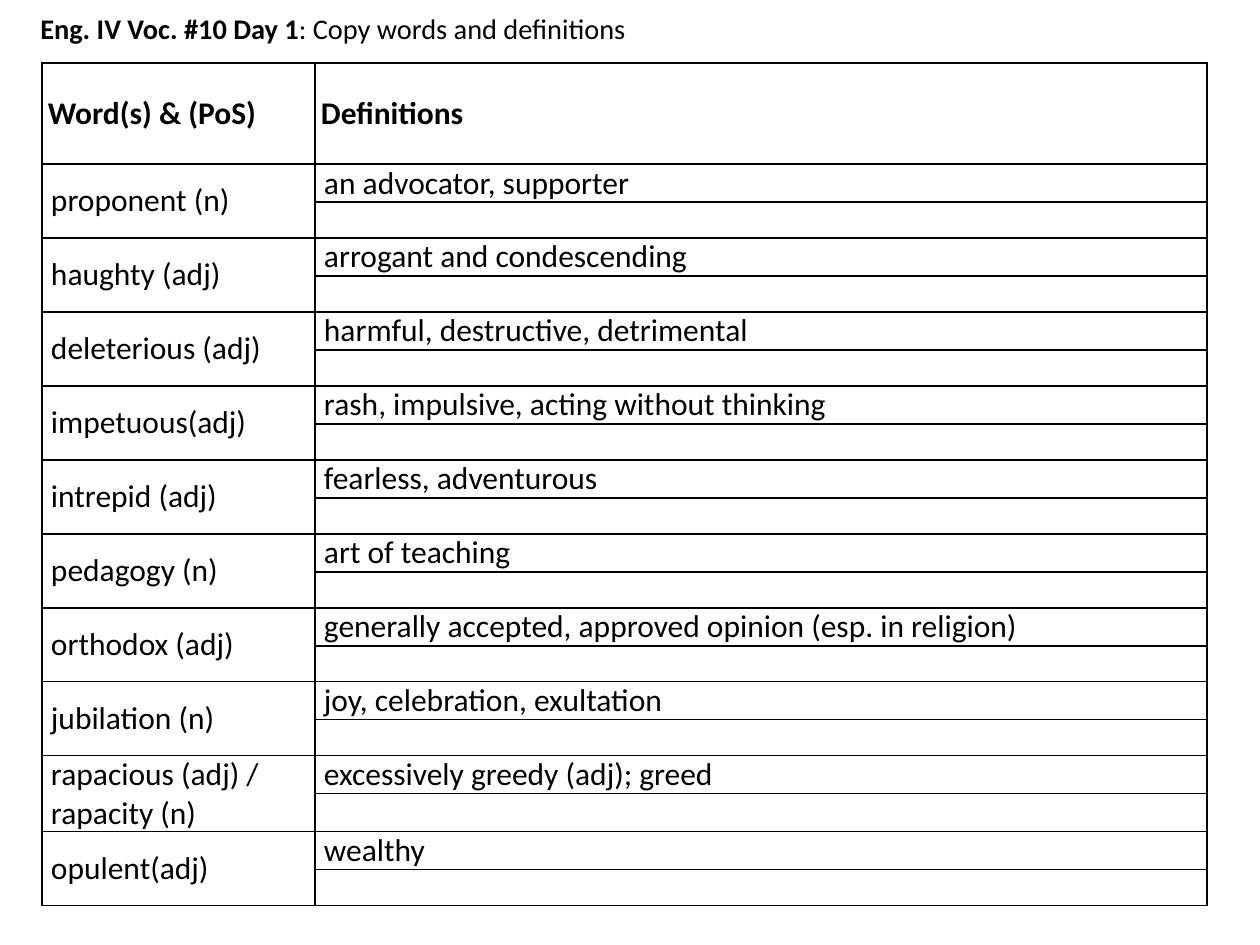
from dataclasses import dataclass

from lxml import etree
from pptx import Presentation, util as u
from pptx.dml.color import RGBColor
from pptx.enum import text
from pptx.oxml import ns

PX_PER_INCH = 126
VOCABULARY = [
    ("proponent (n)", "an advocator, supporter"),
    ("haughty (adj)", "arrogant and condescending"),
    ("deleterious (adj)", "harmful, destructive, detrimental"),
    ("impetuous(adj)", "rash, impulsive, acting without thinking"),
    ("intrepid (adj)", "fearless, adventurous"),
    ("pedagogy (n)", "art of teaching"),
    ("orthodox (adj)", "generally accepted, approved opinion (esp. in religion)"),
    ("jubilation (n)", "joy, celebration, exultation"),
    ("rapacious (adj) /\nrapacity (n)", "excessively greedy (adj); greed"),
    ("opulent(adj)", "wealthy"),
]


@dataclass(frozen=True)
class Theme:
    font: str = "Calibri"
    ink: str = "000000"
    title_size: float = 16.2
    table_size: float = 18
    blank_size: float = 12
    border_width: float = 1


def px(length):
    return u.Emu(round(length * 914400 / PX_PER_INCH))


def write(paragraph, content, *, theme, size, bold=False):
    run = paragraph.add_run()
    run.text = content
    run.font.name = theme.font
    run.font.size = u.Pt(size)
    run.font.bold = bold
    run.font.color.rgb = RGBColor.from_string(theme.ink)


class SlideBuilder:
    """Draws styled elements on one slide, measured in px."""

    def __init__(self, slide, theme):
        self.slide = slide
        self.theme = theme

    def heading(self, box, parts):
        frame = self.slide.shapes.add_textbox(*map(px, box)).text_frame
        frame.word_wrap = True
        frame.vertical_anchor = text.MSO_ANCHOR.MIDDLE
        line = frame.paragraphs[0]
        line.alignment = text.PP_ALIGN.CENTER
        for content, bold in parts:
            write(line, content, theme=self.theme,
                  size=self.theme.title_size, bold=bold)

    def table(self, left, top, columns, rows):
        frame = self.slide.shapes.add_table(
            len(rows), len(columns), px(left), px(top),
            px(sum(columns)), px(sum(rows)))
        grid = frame.table
        grid.first_row = grid.horz_banding = False
        for column, width in zip(grid.columns, columns):
            column.width = px(width)
        for row, height in zip(grid.rows, rows):
            row.height = px(height)
        for cell in grid.iter_cells():
            self.blank_cell(cell)
        return grid

    def blank_cell(self, cell):
        cell.margin_left = cell.margin_right = px(9)
        cell.margin_top = cell.margin_bottom = 0
        cell.vertical_anchor = text.MSO_ANCHOR.MIDDLE
        cell.fill.background()
        properties = cell._tc.get_or_add_tcPr()
        for place, side in enumerate("LRTB"):
            edge = etree.Element(ns.qn(f"a:ln{side}"),
                                 w=str(u.Pt(self.theme.border_width)))
            fill = etree.SubElement(edge, ns.qn("a:solidFill"))
            etree.SubElement(fill, ns.qn("a:srgbClr"), val=self.theme.ink)
            properties.insert(place, edge)
        etree.SubElement(cell.text_frame.paragraphs[0]._p,
                         ns.qn("a:endParaRPr"),
                         sz=str(round(self.theme.blank_size * 100)))

    def fill_cell(self, cell, content, bold=False, margin=9):
        cell.margin_left = cell.margin_right = px(margin)
        frame = cell.text_frame
        for index, line in enumerate(content.split("\n")):
            paragraph = frame.add_paragraph() if index else frame.paragraphs[0]
            write(paragraph, line, theme=self.theme,
                  size=self.theme.table_size, bold=bold)


def main():
    deck = Presentation()
    deck.slide_width, deck.slide_height = px(1260), px(945)
    builder = SlideBuilder(deck.slides.add_slide(deck.slide_layouts[6]), Theme())
    builder.heading((0, 0, 672, 57), [
        ("Eng. IV Voc. #10 Day 1", True),
        (": Copy words and definitions ", False),
    ])

    word_list = builder.table(42, 63, [273, 892], [101] + [38, 36] * len(VOCABULARY))
    for column, label in enumerate(["Word(s) & (PoS)", "Definitions"]):
        builder.fill_cell(word_list.cell(0, column), label, bold=True, margin=6)
    for index, (word, definition) in enumerate(VOCABULARY):
        row = 1 + 2 * index
        word_cell = word_list.cell(row, 0)
        word_cell.merge(word_list.cell(row + 1, 0))
        builder.fill_cell(word_cell, word)
        builder.fill_cell(word_list.cell(row, 1), definition)
    deck.save("out.pptx")


if __name__ == "__main__":
    main()
